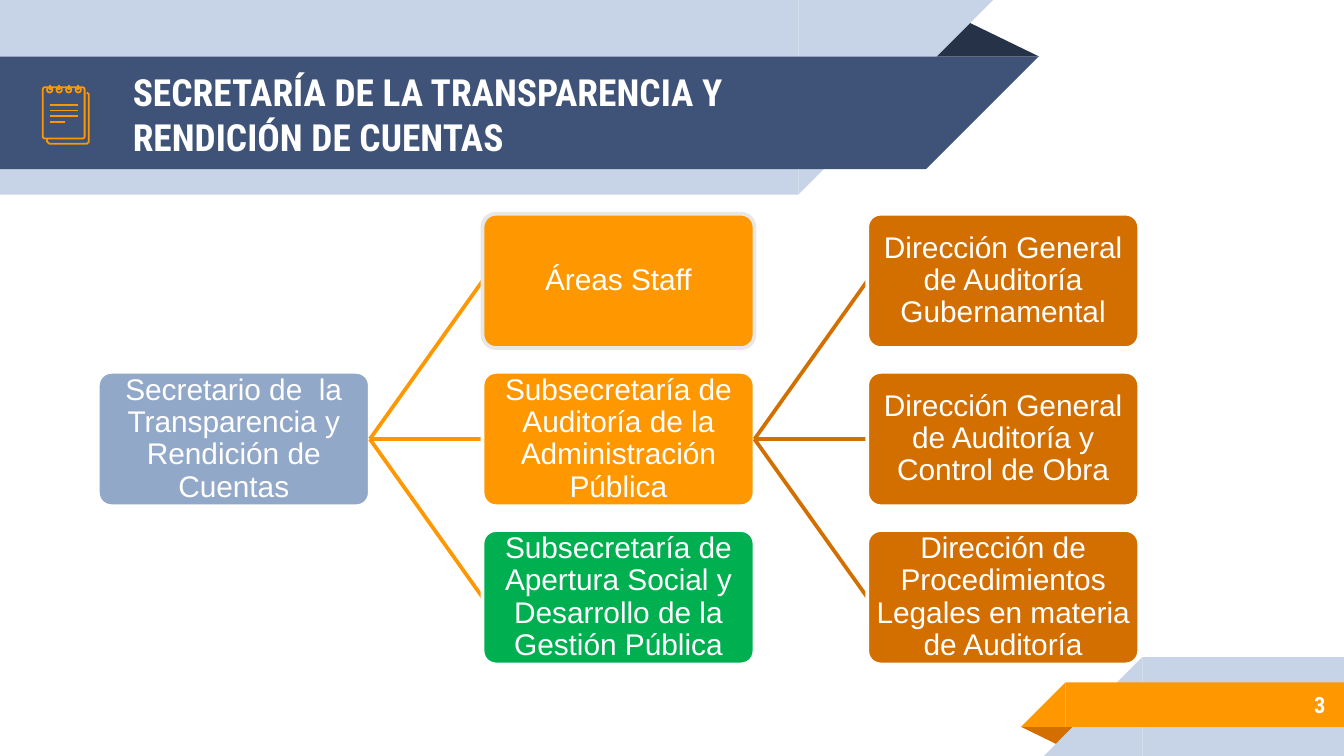
from pptx import Presentation
from pptx.dml.color import RGBColor
from pptx.enum.shapes import MSO_CONNECTOR, MSO_SHAPE
from pptx.enum.text import MSO_ANCHOR, MSO_AUTO_SIZE, PP_ALIGN
from pptx.oxml.ns import qn
from pptx.util import Cm, Pt
from lxml import etree

RECT, CORNER, FOLD = MSO_SHAPE.RECTANGLE, MSO_SHAPE.RIGHT_TRIANGLE, MSO_SHAPE.ISOSCELES_TRIANGLE
ROUNDED, OVAL = MSO_SHAPE.ROUNDED_RECTANGLE, MSO_SHAPE.OVAL
STRAIGHT = MSO_CONNECTOR.STRAIGHT
LEFT, CENTER, RIGHT = PP_ALIGN.LEFT, PP_ALIGN.CENTER, PP_ALIGN.RIGHT
MIDDLE, NO_FIT = MSO_ANCHOR.MIDDLE, MSO_AUTO_SIZE.NONE
LEFT_SITE, RIGHT_SITE = 1, 3

WHITE, PALE, NAVY, DARK = "FFFFFF", "C7D3E6", "3F5378", "263248"
ORANGE, BROWN, BLUE, GREEN, GREY = "FF9800", "D26F00", "92A8C8", "00B050", "E7E7E7"
HEADING_FONT, BODY_FONT = "Roboto Condensed", "Arial"

TITLE = "SECRETARÍA DE LA TRANSPARENCIA Y RENDICIÓN DE CUENTAS"
PAGE_NUMBER = "3"
DECORATION = [
    (FOLD, (17.48, 0.36, 2.16, 0.71), DARK, None, 0),
    (RECT, (0, 0, 15.09, 3.68), PALE, None, 0),
    (CORNER, (15.09, 0, 3.68, 3.68), PALE, "flipV", 0),
    (RECT, (0, 1.07, 17.5, 2.13), NAVY, None, 0),
    (CORNER, (17.5, 1.07, 2.13, 2.13), NAVY, "flipV", 0),
    (FOLD, (19.3, 13.74, 1.09, 0.36), BROWN, None, 180),
    (RECT, (21.59, 12.42, 3.81, 1.87), PALE, None, 0),
    (CORNER, (19.73, 12.42, 1.86, 1.87), PALE, "flipH", 0),
    (RECT, (20.14, 12.9, 5.26, 0.84), ORANGE, None, 0),
    (CORNER, (19.3, 12.9, 0.84, 0.84), ORANGE, "flipH", 0),
]
BACK_PAGE = [(0.89, 2.63), (0.89, 2.68), (0.94, 2.72), (1.64, 2.72),
             (1.68, 2.68), (1.68, 1.78), (1.64, 1.75)]
NOTE_LINE_ENDS = [1.47, 1.47, 1.47, 1.22]

SECRETARY = "Secretario de  la Transparencia y Rendición de Cuentas"
AUDIT = "Subsecretaría de Auditoría de la Administración Pública"
OFFICES = [
    (SECRETARY, None, 0, 1, BLUE, WHITE),
    ("Áreas Staff", SECRETARY, 1, 0, ORANGE, GREY),
    (AUDIT, SECRETARY, 1, 1, ORANGE, WHITE),
    ("Subsecretaría de Apertura Social y Desarrollo de la Gestión Pública",
     SECRETARY, 1, 2, GREEN, WHITE),
    ("Dirección General de Auditoría Gubernamental", AUDIT, 2, 0, BROWN, WHITE),
    ("Dirección General de Auditoría y Control de Obra", AUDIT, 2, 1, BROWN, WHITE),
    ("Dirección de Procedimientos Legales en materia de Auditoría",
     AUDIT, 2, 2, BROWN, WHITE),
]
LINK_COLORS = {SECRETARY: ORANGE, AUDIT: BROWN}
TREE_LEFT, TREE_TOP, COLUMN_STEP, ROW_STEP = 1.85, 4.04, 7.27, 2.99
OFFICE_WIDTH, OFFICE_HEIGHT = 5.14, 2.54


def color(hex_code):
    """Turn a hex string into a colour."""
    return RGBColor.from_string(hex_code)


def paint(shape, fill=None, line=None, width=0.96):
    """Set fill and outline, and drop the shadow."""
    shape.shadow.inherit = False
    if fill:
        shape.fill.solid()
        shape.fill.fore_color.rgb = color(fill)
    else:
        shape.fill.background()
    if line:
        shape.line.color.rgb = color(line)
        shape.line.width = Pt(width)
    else:
        shape.line.fill.background()


def add_preset(shapes, kind, box, fill=None, line=None, width=0.96):
    """Add a painted preset shape with its box in centimetres."""
    shape = shapes.add_shape(kind, *map(Cm, box))
    paint(shape, fill, line, width)
    return shape


def add_line(shapes, ends, line, width=0.96):
    """Add a straight connector without shadow."""
    connector = shapes.add_connector(STRAIGHT, *map(Cm, ends))
    connector.line.color.rgb = color(line)
    connector.line.width = Pt(width)
    etree.SubElement(connector.element.spPr, qn("a:effectLst"))
    return connector


def write(shape, text, font, size, align, margin, bold=False):
    """Put one white, vertically centred run in a shape."""
    frame = shape.text_frame
    frame.word_wrap, frame.auto_size, frame.vertical_anchor = True, NO_FIT, MIDDLE
    frame.margin_left = frame.margin_right = Cm(margin)
    frame.margin_top = frame.margin_bottom = Cm(margin)
    paragraph = frame.paragraphs[0]
    paragraph.alignment = align
    run = paragraph.add_run()
    run.text = text
    run.font.name, run.font.size, run.font.bold = font, Pt(size), bold
    run.font.color.rgb = color(WHITE)
    return paragraph


def add_decoration(shapes):
    """Draw the folded ribbons at the top and bottom."""
    for kind, box, fill, flip, rotation in DECORATION:
        ribbon = add_preset(shapes, kind, box, fill)
        ribbon.rotation = rotation
        if kind == FOLD:
            ribbon.adjustments[0] = 0.324
        if flip:
            ribbon.element.spPr.xfrm.set(flip, "1")


def add_notepad(shapes):
    """Draw the outlined notepad icon."""
    points = [(Cm(x), Cm(y)) for x, y in BACK_PAGE]
    builder = shapes.build_freeform(*points[0])
    builder.add_line_segments(points[1:], close=False)
    paint(builder.convert_to_shape(), line=ORANGE)
    cover = add_preset(shapes, ROUNDED, (0.81, 1.65, 0.79, 0.97), line=ORANGE)
    cover.adjustments[0] = 0.05
    for index, end in enumerate(NOTE_LINE_ENDS):
        y = 1.98 + 0.11 * index
        add_line(shapes, (0.94, y, end, y), ORANGE)
        x = 0.94 + 0.18 * index
        add_preset(shapes, OVAL, (x - 0.05, 1.65, 0.1, 0.1), line=ORANGE)
        add_line(shapes, (x, 1.6, x, 1.7), ORANGE)


def add_tree(shapes):
    """Draw the offices and join each one to its parent."""
    boxes = {}
    for text, parent, column, row, fill, outline in OFFICES:
        if parent:
            link = add_line(shapes, (0, 0, 1, 1), LINK_COLORS[parent], 2)
        box = (TREE_LEFT + COLUMN_STEP * column, TREE_TOP + ROW_STEP * row,
               OFFICE_WIDTH, OFFICE_HEIGHT)
        office = add_preset(shapes, ROUNDED, box, fill, outline, 2)
        office.adjustments[0] = 0.1
        write(office, text, BODY_FONT, 16, CENTER, 0.02).line_spacing = 0.9
        boxes[text] = office
        if parent:
            link.begin_connect(boxes[parent], RIGHT_SITE)
            link.end_connect(office, LEFT_SITE)


def main():
    """Build and save the slide."""
    deck = Presentation()
    deck.slide_width, deck.slide_height = Cm(25.4), Cm(14.29)
    slide = deck.slides.add_slide(deck.slide_layouts[5])
    shapes = slide.shapes
    add_decoration(shapes)
    title = shapes.title
    title.left, title.top, title.width, title.height = map(Cm, (2.26, 1.09, 14.6, 2.13))
    write(title, TITLE, HEADING_FONT, 20, LEFT, 0.25, True)
    shapes.element.append(title.element)
    number = shapes.add_textbox(*map(Cm, (21.16, 12.88, 4.14, 0.89)))
    write(number, PAGE_NUMBER, HEADING_FONT, 12, RIGHT, 0.25, True)
    add_notepad(shapes)
    add_tree(shapes)
    deck.save("out.pptx")


if __name__ == "__main__":
    main()
